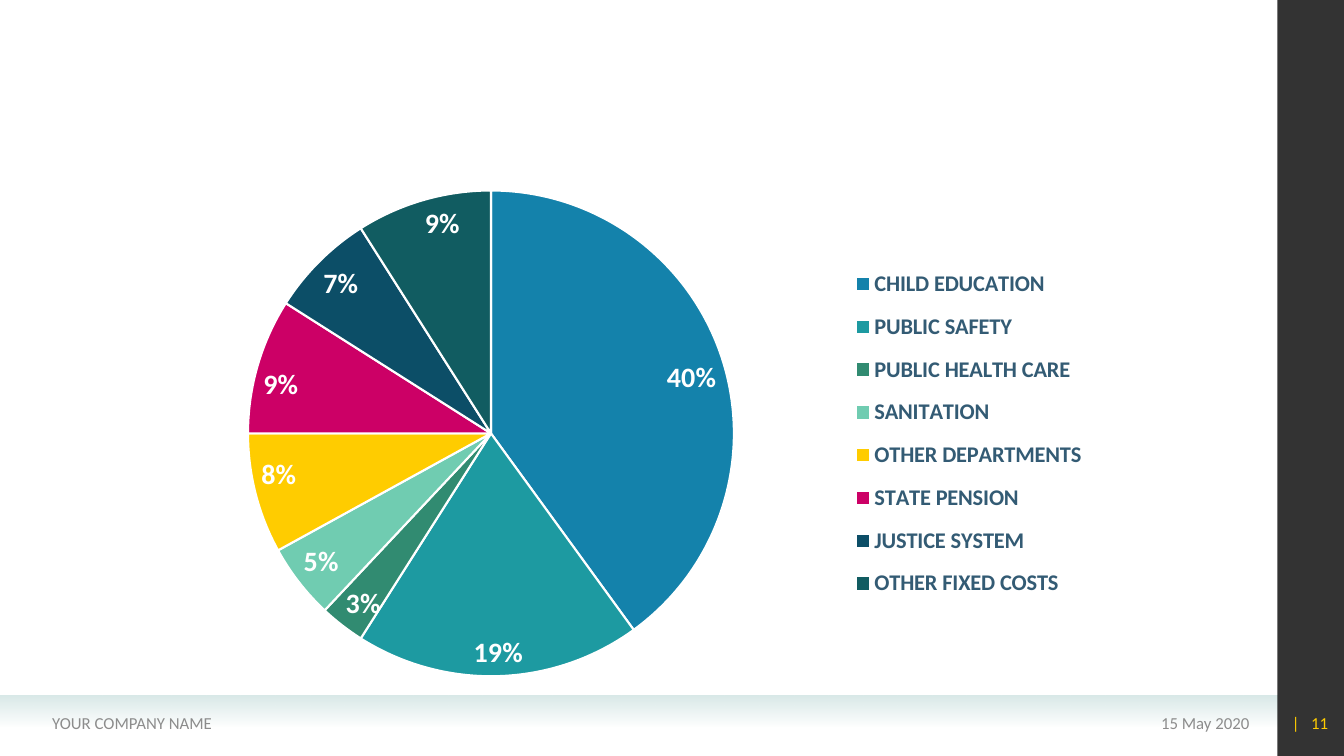
from dataclasses import dataclass

from lxml.etree import SubElement
from pptx import Presentation
from pptx.chart.chart import Chart
from pptx.chart.data import CategoryChartData as ChartData
from pptx.dml.color import RGBColor
from pptx.enum.chart import XL_CHART_TYPE as Kind
from pptx.enum.chart import XL_LABEL_POSITION as Place
from pptx.enum.chart import XL_LEGEND_POSITION as Side
from pptx.enum.shapes import MSO_SHAPE as Form
from pptx.enum.text import MSO_ANCHOR as Anchor
from pptx.enum.text import PP_ALIGN as Align
from pptx.oxml.ns import qn
from pptx.shapes.autoshape import Shape
from pptx.slide import Slide
from pptx.util import Inches, Pt


@dataclass(frozen=True)
class Box:
    left: float
    top: float
    width: float
    height: float

    def size(self) -> tuple:
        return tuple(Inches(n) for n in (self.left, self.top, self.width, self.height))


@dataclass(frozen=True)
class Run:
    text: str
    gap: float = 0


@dataclass(frozen=True)
class Note:
    box: Box
    runs: tuple[Run, ...]
    align: Align
    color: str


@dataclass(frozen=True)
class Slice:
    name: str
    value: int
    color: str


GREY = "8C8C8C"
NOTES = (
    Note(Box(9.1, 6.97, 3.39, 0.4), (Run("15 May 2020"),), Align.RIGHT, GREY),
    Note(Box(0.42, 6.97, 4.9, 0.4), (Run("YOUR COMPANY NAME"),), Align.LEFT, GREY),
    Note(Box(12.6, 6.97, 0.67, 0.4), (Run("|"), Run(" ", 5.4), Run("11")), Align.RIGHT, "FFCC00"),
)
COSTS = (
    Slice("CHILD EDUCATION", 40, "1482AB"),
    Slice("PUBLIC SAFETY", 19, "1D9AA1"),
    Slice("PUBLIC HEALTH CARE", 3, "318B71"),
    Slice("SANITATION", 5, "70CCB1"),
    Slice("OTHER DEPARTMENTS", 8, "FFCC00"),
    Slice("STATE PENSION", 9, "CC0066"),
    Slice("JUSTICE SYSTEM", 7, "0C4E67"),
    Slice("OTHER FIXED COSTS", 9, "115C61"),
)
FRAME = Box(0.91, 1.75, 10.38, 5.11)
PIE = Box(2.46, 1.89, 4.82, 4.82)
KEY = Box(8.36, 2.53, 2.5, 3.55)


def shade(text: str) -> RGBColor:
    return RGBColor.from_string(text)


def style(font, size: float, color: str, bold: bool = False, face: str = "Calibri") -> None:
    font.name = face
    font.size = Pt(size)
    font.bold = bold
    font.color.rgb = shade(color)


def fade(shape: Shape, index: int, part: int) -> None:
    color = shape._element.spPr.findall(".//" + qn("a:srgbClr"))[index]
    SubElement(color, qn("a:alpha"), val=str(part * 1000))


def add_rect(slide: Slide, box: Box) -> Shape:
    rect = slide.shapes.add_shape(Form.RECTANGLE, *box.size())
    rect.shadow.inherit = False
    rect.line.fill.background()
    return rect


def add_bands(slide: Slide) -> None:
    foot = add_rect(slide, Box(0, 6.9, 12.67, 0.31))
    foot.fill.gradient()
    foot.fill.gradient_angle = 270
    for stop, spot in zip(foot.fill.gradient_stops, (0, 1)):
        stop.color.rgb = shade("D9E9E8")
        stop.position = spot
    fade(foot, 1, 0)

    side = add_rect(slide, Box(12.67, 0, 0.67, 7.5))
    side.fill.solid()
    side.fill.fore_color.rgb = shade("000000")
    fade(side, 0, 80)


def add_note(slide: Slide, note: Note) -> None:
    frame = slide.shapes.add_textbox(*note.box.size()).text_frame
    frame.word_wrap = True
    frame.vertical_anchor = Anchor.MIDDLE
    para = frame.paragraphs[0]
    para.alignment = note.align
    for item in note.runs:
        run = para.add_run()
        run.text = item.text
        style(run.font, 12, note.color)
        if item.gap:
            run._r.get_or_add_rPr().set("spc", str(round(item.gap * 100)))


def set_place(node, index: int, box: Box, inner: bool = False) -> None:
    for old in node.findall(qn("c:layout")):
        node.remove(old)
    layout = SubElement(node, qn("c:layout"))
    node.insert(index, layout)
    manual = SubElement(layout, qn("c:manualLayout"))
    rules = {"layoutTarget": "inner"} if inner else {}
    rules |= {
        "xMode": "edge",
        "yMode": "edge",
        "x": (box.left - FRAME.left) / FRAME.width,
        "y": (box.top - FRAME.top) / FRAME.height,
        "w": box.width / FRAME.width,
        "h": box.height / FRAME.height,
    }
    for tag, value in rules.items():
        SubElement(manual, qn("c:" + tag), val=str(value))


def add_pie(slide: Slide) -> Chart:
    data = ChartData()
    data.categories = [cost.name for cost in COSTS]
    data.add_series("Series 1", [cost.value for cost in COSTS])
    chart = slide.shapes.add_chart(Kind.PIE, *FRAME.size(), data).chart
    chart.has_title = False
    style(chart.font, 32, "335B74", True, "Manrope")

    plot = chart.plots[0]
    plot.vary_by_categories = True
    for index, cost in enumerate(COSTS):
        form = plot.series[0].points[index].format
        form.fill.solid()
        form.fill.fore_color.rgb = shade(cost.color)
        form.line.color.rgb = shade("FFFFFF")
        form.line.width = Pt(1.5)

    plot.has_data_labels = True
    labels = plot.data_labels
    labels.show_value = False
    labels.show_percentage = True
    labels.number_format = "0%"
    labels.number_format_is_linked = False
    labels.position = Place.INSIDE_END
    style(labels.font, 20, "FFFFFF", True)

    chart.has_legend = True
    legend = chart.legend
    legend.position = Side.RIGHT
    legend.include_in_layout = False
    style(legend.font, 16, "335B74", True)
    set_place(legend._element, 1, KEY)
    set_place(chart._chartSpace.chart.plotArea, 0, PIE, True)
    return chart


def main() -> None:
    deck = Presentation()
    deck.slide_width = Inches(13.33)
    deck.slide_height = Inches(7.5)
    slide = deck.slides.add_slide(deck.slide_layouts[6])
    add_bands(slide)
    for note in NOTES:
        add_note(slide, note)
    add_pie(slide)
    deck.save("out.pptx")


if __name__ == "__main__":
    main()
